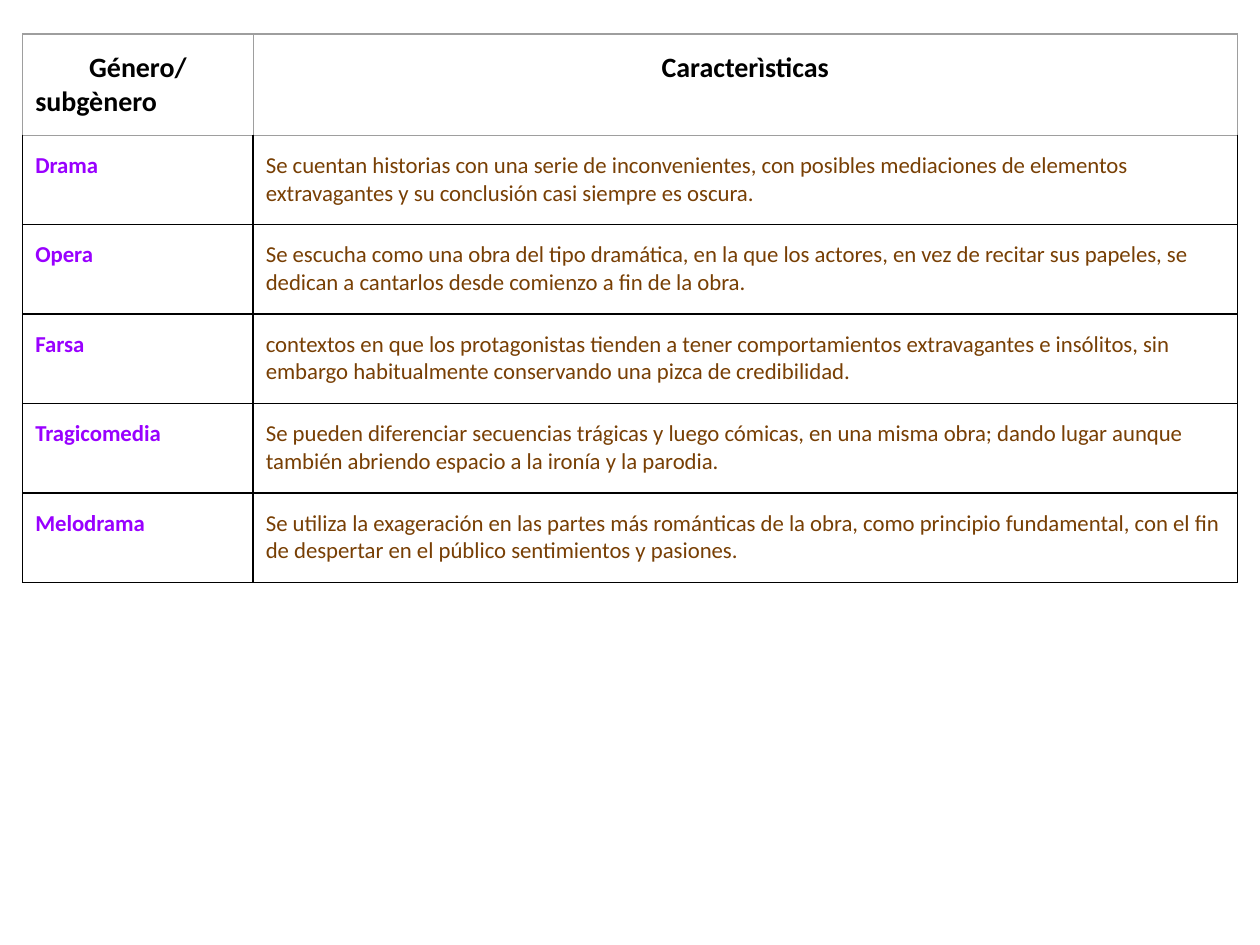
from lxml import etree
from pptx import Presentation
from pptx.dml.color import RGBColor
from pptx.enum.text import PP_ALIGN
from pptx.oxml.ns import qn
from pptx.util import Inches, Pt

LEFT, CENTER = PP_ALIGN.LEFT, PP_ALIGN.CENTER
BLACK = RGBColor(0x00, 0x00, 0x00)
GRAY = RGBColor(0x9E, 0x9E, 0x9E)
PURPLE = RGBColor(0x99, 0x00, 0xFF)
BROWN = RGBColor(0x78, 0x3F, 0x04)
FONT = "Calibri"

# Each header cell is a list of (line, alignment).
HEADERS = [
    [("Género/", CENTER), ("subgènero", LEFT)],
    [("Caracterìsticas", CENTER)],
]
GENRES = [
    ("Drama", "Se cuentan historias con una serie de inconvenientes, con posibles "
              "mediaciones de elementos extravagantes y su conclusión casi siempre es oscura."),
    ("Opera", "Se escucha como una obra del tipo dramática, en la que los actores, en vez de "
              "recitar sus papeles, se dedican a cantarlos desde comienzo a fin de la obra."),
    ("Farsa", "contextos en que los protagonistas tienden a tener comportamientos extravagantes "
              "e insólitos, sin embargo habitualmente conservando una pizca de credibilidad."),
    ("Tragicomedia", "Se pueden diferenciar secuencias trágicas y luego cómicas, en una misma obra; "
                     "dando lugar aunque también abriendo espacio a la ironía y la parodia."),
    ("Melodrama", "Se utiliza la exageración en las partes más románticas de la obra, como principio "
                  "fundamental, con el fin de despertar en el público sentimientos y pasiones."),
]

TABLE_LEFT, TABLE_TOP = 0.18, 0.27
COLUMN_WIDTHS = [1.83, 7.81]
ROW_HEIGHTS = [0.8] + [0.71] * len(GENRES)
MARGIN_X, MARGIN_Y = 0.1, 0.13


def set_border(cell, side, color, width):
    """Draw one side of a cell; side is L, R, T or B."""
    line = etree.SubElement(cell._tc.get_or_add_tcPr(), qn(f"a:ln{side}"), w=str(Pt(width)))
    fill = etree.SubElement(line, qn("a:solidFill"))
    etree.SubElement(fill, qn("a:srgbClr"), val=str(color))


def fill_cell(cell, lines, size, color, bold, border, top_border):
    """Write (text, alignment) lines and format the cell; borders are (color, width)."""
    for side in "LRTB":
        set_border(cell, side, *(top_border if side == "T" else border))
    cell.fill.background()
    cell.margin_left = cell.margin_right = Inches(MARGIN_X)
    cell.margin_top = cell.margin_bottom = Inches(MARGIN_Y)
    frame = cell.text_frame
    for index, (text, alignment) in enumerate(lines):
        paragraph = frame.add_paragraph() if index else frame.paragraphs[0]
        paragraph.alignment = alignment
        run = paragraph.add_run()
        run.text = text
        run.font.name = FONT
        run.font.size = Pt(size)
        run.font.bold = bold
        run.font.color.rgb = color


def main():
    presentation = Presentation()
    presentation.slide_width, presentation.slide_height = Inches(10), Inches(7.5)
    slide = presentation.slides.add_slide(presentation.slide_layouts[6])

    table = slide.shapes.add_table(
        len(ROW_HEIGHTS), len(COLUMN_WIDTHS), Inches(TABLE_LEFT), Inches(TABLE_TOP),
        Inches(sum(COLUMN_WIDTHS)), Inches(sum(ROW_HEIGHTS))).table
    table.first_row = table.horz_banding = False
    for column, width in zip(table.columns, COLUMN_WIDTHS):
        column.width = Inches(width)
    for row, height in zip(table.rows, ROW_HEIGHTS):
        row.height = Inches(height)

    header_border, body_border = (GRAY, 0.75), (BLACK, 1)
    for column, lines in enumerate(HEADERS):
        fill_cell(table.cell(0, column), lines, 16, BLACK, True, header_border, header_border)
    for row, (genre, description) in enumerate(GENRES, start=1):
        top_border = header_border if row == 1 else body_border
        fill_cell(table.cell(row, 0), [(genre, LEFT)], 13, PURPLE, True, body_border, top_border)
        fill_cell(table.cell(row, 1), [(description, LEFT)], 13, BROWN, False,
                  body_border, top_border)

    presentation.save("out.pptx")


if __name__ == "__main__":
    main()
